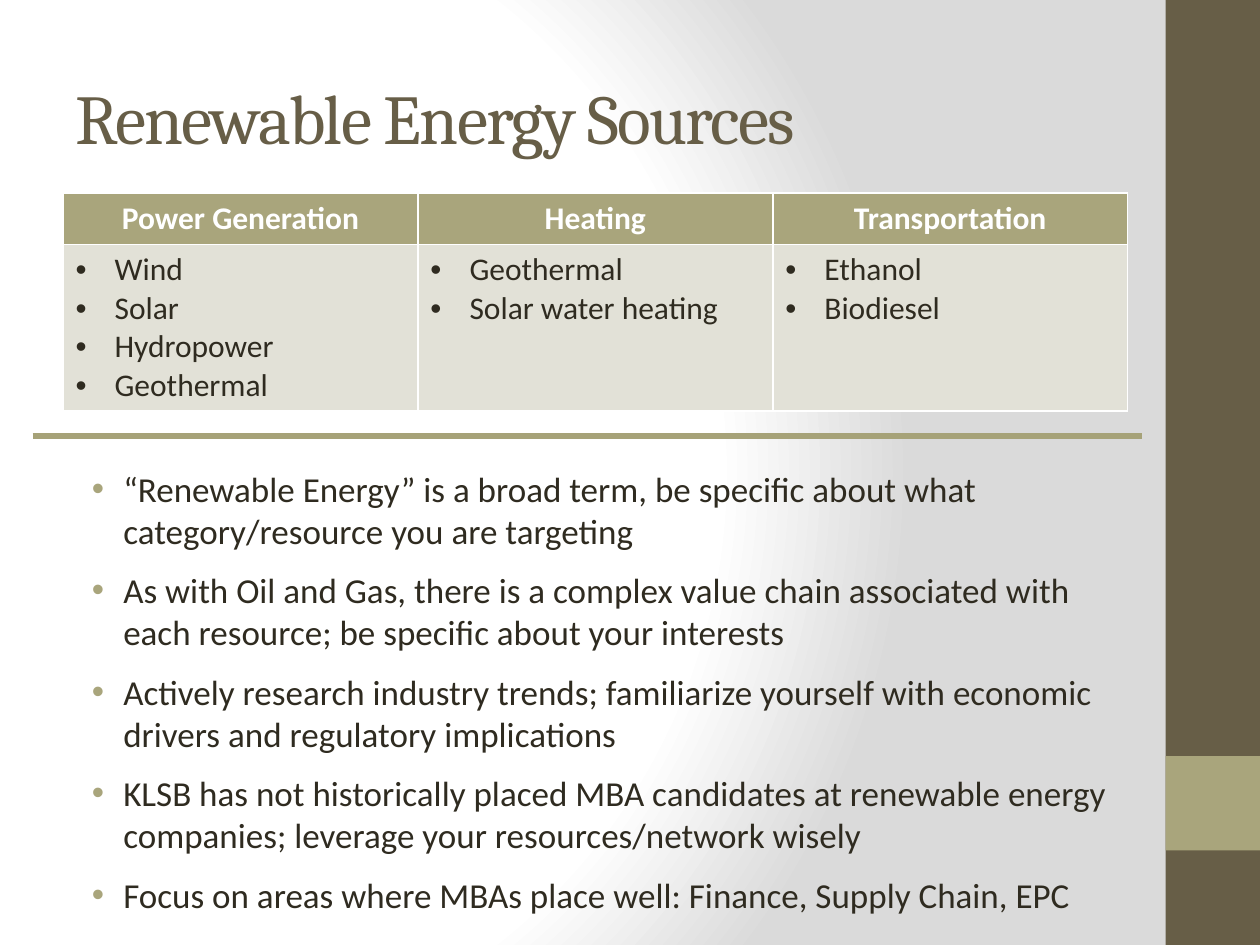
import pptx
import pptx.dml.color
import pptx.enum.shapes
import pptx.enum.text
import pptx.oxml
import pptx.oxml.ns
import pptx.util
from pptx.util import Inches

RGBColor = pptx.dml.color.RGBColor
BROWN = RGBColor(0x67, 0x5E, 0x47)
OLIVE = RGBColor(0xA9, 0xA5, 0x7C)
RULE = RGBColor(0xA6, 0xA2, 0x78)
PALE = RGBColor(0xE2, 0xE1, 0xD7)
INK = RGBColor(0x2F, 0x2B, 0x20)
WHITE = RGBColor(0xFF, 0xFF, 0xFF)
GREY = RGBColor(0xDA, 0xDA, 0xDA)
NAMESPACE = pptx.oxml.ns.nsdecls("a")

SOURCES = {
    "Power Generation": ["Wind", "Solar", "Hydropower", "Geothermal"],
    "Heating": ["Geothermal", "Solar water heating"],
    "Transportation": ["Ethanol", "Biodiesel"],
}
ADVICE = [
    "“Renewable Energy” is a broad term, be specific about what category/resource you are targeting",
    "As with Oil and Gas, there is a complex value chain associated with each resource; be specific about your interests",
    "Actively research industry trends; familiarize yourself with economic drivers and regulatory implications",
    "KLSB has not historically placed MBA candidates at renewable energy companies; leverage your resources/network wisely",
    "Focus on areas where MBAs place well: Finance, Supply Chain, EPC",
]


def format_text(para, name, size, color, bold=False):
    for span in para.runs:
        span.font.name = name
        span.font.size = pptx.util.Pt(size)
        span.font.color.rgb = color
        span.font.bold = bold


def add_bullet(para, left, hanging, color):
    properties = para._p.get_or_add_pPr()
    properties.set("marL", str(Inches(left)))
    properties.set("indent", str(-Inches(hanging)))
    for xml in (
        f'<a:buClr {NAMESPACE}><a:srgbClr val="{color}"/></a:buClr>',
        f'<a:buFont {NAMESPACE} typeface="Arial"/>',
        f'<a:buChar {NAMESPACE} char="•"/>',
    ):
        properties.append(pptx.oxml.parse_xml(xml))


deck = pptx.Presentation()
deck.slide_width, deck.slide_height = Inches(10), Inches(7.5)
page = deck.slides.add_slide(deck.slide_layouts[5])

# Background: circular gradient
page.background.fill.solid()
stops = "".join(
    f'<a:gs pos="{percent * 1000}"><a:srgbClr val="{color}"/></a:gs>'
    for percent, color in ((0, WHITE), (75, WHITE), (100, GREY))
)
gradient = pptx.oxml.parse_xml(
    f'<a:gradFill {NAMESPACE} rotWithShape="1"><a:gsLst>{stops}</a:gsLst><a:path path="circle">'
    '<a:fillToRect l="20000" t="50000" r="100000" b="50000"/></a:path></a:gradFill>'
)
background = page._element.cSld.bg.bgPr
background.replace(background[0], gradient)

# Side band
for top, height, color in ((0, 7.5, BROWN), (6, 0.75, OLIVE)):
    band = page.shapes.add_shape(
        pptx.enum.shapes.MSO_SHAPE.RECTANGLE, Inches(9.25), Inches(top), Inches(0.75), Inches(height)
    )
    band.shadow.inherit = False
    band.fill.solid()
    band.fill.fore_color.rgb = color
    band.line.fill.background()

# Title
title = page.shapes.title
title.left, title.top, title.width, title.height = Inches(0.5), Inches(0.3), Inches(8.87), Inches(1.25)
title.text_frame.text = "Renewable Energy Sources"
title.text_frame.vertical_anchor = pptx.enum.text.MSO_ANCHOR.MIDDLE
heading = title.text_frame.paragraphs[0]
heading.alignment = pptx.enum.text.PP_ALIGN.LEFT
format_text(heading, "Cambria", 40, BROWN)
heading.runs[0].font._element.set("spc", "-100")

# Table of sources
table = page.shapes.add_table(
    2, len(SOURCES), Inches(0.5), Inches(1.53), Inches(8.45), Inches(1.71)
).table
table.horz_banding = False
table.rows[0].height, table.rows[1].height = Inches(0.41), Inches(1.3)
for column, (category, resources) in enumerate(SOURCES.items()):
    header, body = table.cell(0, column), table.cell(1, column)
    header.text_frame.text = category
    header.text_frame.paragraphs[0].alignment = pptx.enum.text.PP_ALIGN.CENTER
    format_text(header.text_frame.paragraphs[0], "Calibri", 18, WHITE, bold=True)
    body.text_frame.text = "\n".join(resources)
    for para in body.text_frame.paragraphs:
        format_text(para, "Calibri", 18, INK)
        add_bullet(para, 0.31, 0.31, INK)
    for cell, color in ((header, OLIVE), (body, PALE)):
        cell.fill.solid()
        cell.fill.fore_color.rgb = color
        for position, side in enumerate("LRTB"):
            border = pptx.oxml.parse_xml(
                f'<a:ln{side} {NAMESPACE} w="{pptx.util.Pt(1)}"><a:solidFill>'
                f'<a:srgbClr val="{WHITE}"/></a:solidFill></a:ln{side}>'
            )
            cell._tc.get_or_add_tcPr().insert(position, border)

# Advice
advice = page.shapes.add_textbox(Inches(0.5), Inches(3.66), Inches(8.45), Inches(3.74)).text_frame
advice.word_wrap = True
advice.text = "\n".join(ADVICE)
for para in advice.paragraphs:
    para.space_before, para.space_after = pptx.util.Pt(4), pptx.util.Pt(6)
    format_text(para, "Calibri", 20, INK)
    add_bullet(para, 0.38, 0.25, OLIVE)

# Divider
divider = page.shapes.add_connector(
    pptx.enum.shapes.MSO_CONNECTOR.STRAIGHT, Inches(0.26), Inches(3.46), Inches(9.06), Inches(3.46)
)
divider.line.color.rgb = RULE
divider.line.width = pptx.util.Pt(3)
divider._element.spPr.append(pptx.oxml.parse_xml(f"<a:effectLst {NAMESPACE}/>"))

deck.save("out.pptx")
